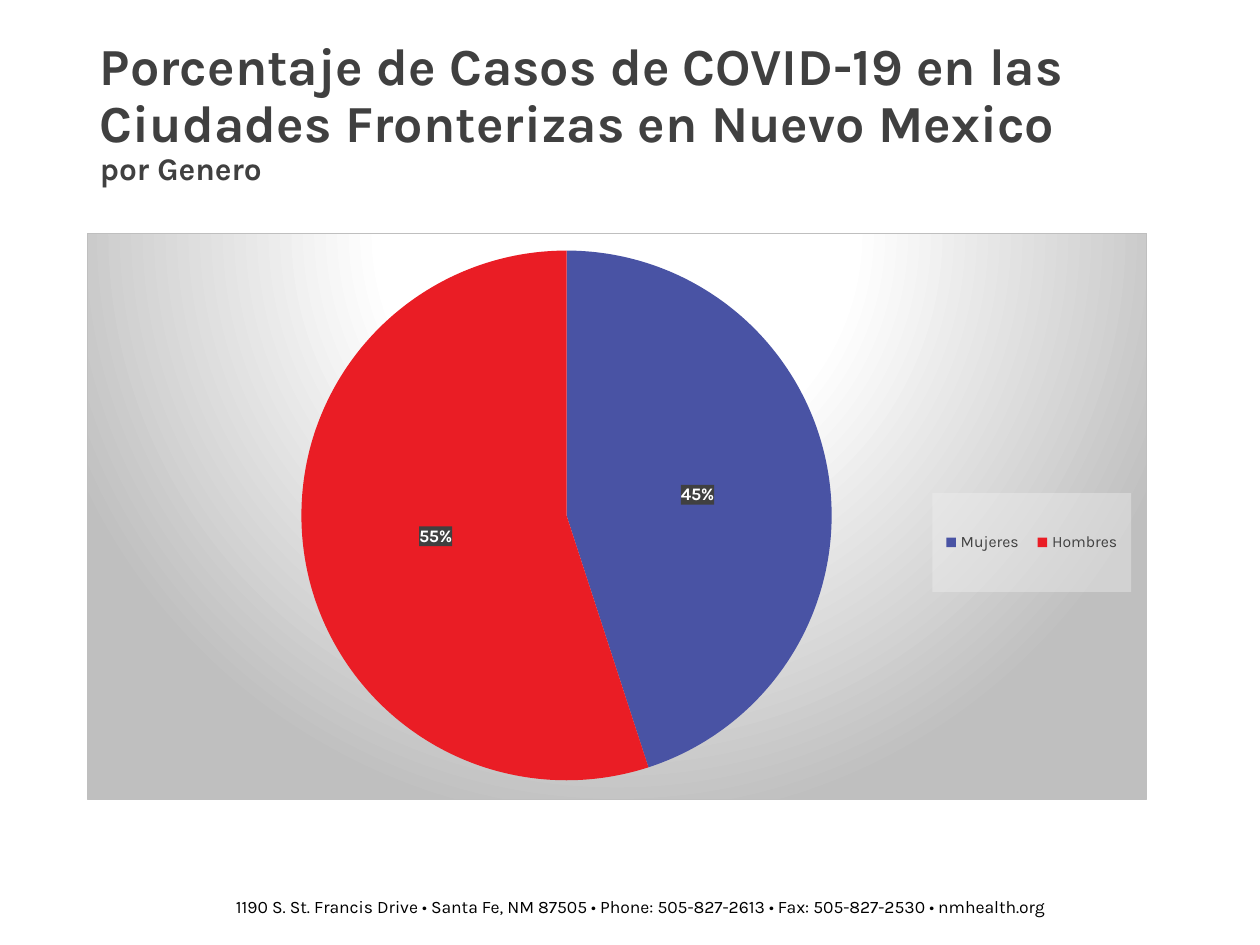
from dataclasses import dataclass

from lxml.etree import fromstring
from pptx import Presentation
from pptx.chart.data import CategoryChartData
from pptx.dml.color import RGBColor
from pptx.enum.chart import XL_CHART_TYPE as ChartType
from pptx.enum.chart import XL_LABEL_POSITION as LabelPosition
from pptx.enum.chart import XL_LEGEND_POSITION as LegendPosition
from pptx.util import Emu, Pt

PX = 914400 / 126
FONT = "Karla"
BLACK = RGBColor(0, 0, 0)
WHITE = RGBColor(255, 255, 255)
CHARCOAL = RGBColor(0x40, 0x40, 0x40)
BLUE = RGBColor(0x49, 0x53, 0xA4)
RED = RGBColor(0xEA, 0x1D, 0x25)

NAMESPACES = (
    'xmlns:c="http://schemas.openxmlformats.org/drawingml/2006/chart" '
    'xmlns:a="http://schemas.openxmlformats.org/drawingml/2006/main"'
)
CHART_FILL = """<a:gradFill><a:gsLst>
<a:gs pos="0"><a:srgbClr val="FFFFFF"/></a:gs>
<a:gs pos="39000"><a:srgbClr val="FFFFFF"/></a:gs>
<a:gs pos="100000"><a:srgbClr val="BFBFBF"/></a:gs></a:gsLst>
<a:path path="circle"><a:fillToRect l="50000" t="-80000" r="50000" b="180000"/></a:path>
</a:gradFill><a:ln w="9525"><a:solidFill><a:srgbClr val="BFBFBF"/></a:solidFill></a:ln>"""


@dataclass(frozen=True)
class Area:
    left: int
    top: int
    width: int
    height: int

    def emu(self) -> list[Emu]:
        return [px(n) for n in (self.left, self.top, self.width, self.height)]


@dataclass(frozen=True)
class Line:
    text: str
    size: float
    color: RGBColor
    bold: bool = False
    spacing: float = 1.0


@dataclass(frozen=True)
class Slice:
    name: str
    percent: int
    color: RGBColor


CHART = Area(87, 233, 1060, 567)
PIE = Area(301, 250, 531, 531)
LEGEND = Area(933, 493, 199, 99)
SLICES = [Slice("Mujeres", 45, BLUE), Slice("Hombres", 55, RED)]
TITLE = [
    Line("Porcentaje de Casos de COVID-19 en las Ciudades Fronterizas en Nuevo Mexico",
         29.7, CHARCOAL, True, 0.9),
    Line("por Genero", 18, CHARCOAL, True, 0.9),
]
ADDRESS = [
    Line("1190 S. St. Francis Drive • Santa Fe, NM 87505 • Phone: 505-827-2613"
         " • Fax: 505-827-2530 • nmhealth.org", 10, BLACK),
]


def px(length: int) -> Emu:
    return Emu(round(length * PX))


def style_font(font, size: float, color: RGBColor, bold: bool = False) -> None:
    for name, value in {"name": FONT, "size": Pt(size), "bold": bold}.items():
        setattr(font, name, value)
    font.color.rgb = color


def add_text(page, area: Area, lines: list[Line], top_inset: int) -> None:
    frame = page.shapes.add_textbox(*area.emu()).text_frame
    insets = {"margin_left": 13, "margin_right": 13,
              "margin_top": top_inset, "margin_bottom": top_inset}
    for name, value in insets.items():
        setattr(frame, name, px(value))
    frame.word_wrap = True
    for index, line in enumerate(lines):
        para = frame.add_paragraph() if index else frame.paragraphs[0]
        para.line_spacing = line.spacing
        span = para.add_run()
        span.text = line.text
        style_font(span.font, line.size, line.color, line.bold)


def shape_format(content: str):
    return fromstring(f"<c:spPr {NAMESPACES}>{content}</c:spPr>")


def solid_fill(color: RGBColor, alpha: int):
    return shape_format(f'<a:solidFill><a:srgbClr val="{color}">'
                        f'<a:alpha val="{alpha * 1000}"/></a:srgbClr></a:solidFill>')


def manual_layout(area: Area, target: str = ""):
    """Place a chart part by its fractions of the chart area."""
    fractions = {
        "x": (area.left - CHART.left) / CHART.width,
        "y": (area.top - CHART.top) / CHART.height,
        "w": area.width / CHART.width,
        "h": area.height / CHART.height,
    }
    modes = "".join(f'<c:{axis}Mode val="edge"/>' for axis in "xy")
    values = "".join(f'<c:{k} val="{v:.4f}"/>' for k, v in fractions.items())
    return fromstring(f"<c:layout {NAMESPACES}><c:manualLayout>{target}{modes}{values}"
                      "</c:manualLayout></c:layout>")


def drop_layout(element) -> None:
    for layout in element.findall("{*}layout"):
        element.remove(layout)


def add_pie(page) -> None:
    data = CategoryChartData()
    data.categories = [part.name for part in SLICES]
    data.add_series("Series 1", [part.percent for part in SLICES])
    chart = page.shapes.add_chart(ChartType.PIE, *CHART.emu(), data).chart
    chart.has_title = False
    style_font(chart.font, 10, BLACK)
    space = chart._chartSpace
    space.find("{*}chart").addnext(shape_format(CHART_FILL))

    plot = chart.plots[0]
    plot.vary_by_categories = True
    for index, part in enumerate(SLICES):
        fill = plot.series[0].points[index].format.fill
        fill.solid()
        fill.fore_color.rgb = part.color
    plot_area = space.find(".//{*}plotArea")
    drop_layout(plot_area)
    plot_area.insert(0, manual_layout(PIE, '<c:layoutTarget val="inner"/>'))

    labels = plot.series[0].data_labels
    style_font(labels.font, 10, WHITE, True)
    settings = {"show_percentage": True, "show_value": False,
                "show_category_name": False, "show_legend_key": False,
                "number_format": "0%", "number_format_is_linked": False,
                "position": LabelPosition.CENTER}
    for name, value in settings.items():
        setattr(labels, name, value)
    labels._element.find("{*}txPr").addprevious(solid_fill(CHARCOAL, 90))

    chart.has_legend = True
    legend = chart.legend
    legend.position = LegendPosition.RIGHT
    legend.include_in_layout = False
    style_font(legend.font, 9, CHARCOAL)
    element = legend._element
    drop_layout(element)
    element.find("{*}legendPos").addnext(manual_layout(LEGEND))
    element.find("{*}txPr").addprevious(solid_fill(RGBColor(0xF2, 0xF2, 0xF2), 39))


def main() -> None:
    deck = Presentation()
    deck.slide_width, deck.slide_height = px(1260), px(945)
    page = deck.slides.add_slide(deck.slide_layouts[6])
    add_text(page, Area(223, 890, 1033, 34), ADDRESS, 6)
    add_text(page, Area(87, 41, 1086, 192), TITLE, 0)
    add_pie(page)
    deck.save("out.pptx")


if __name__ == "__main__":
    main()
